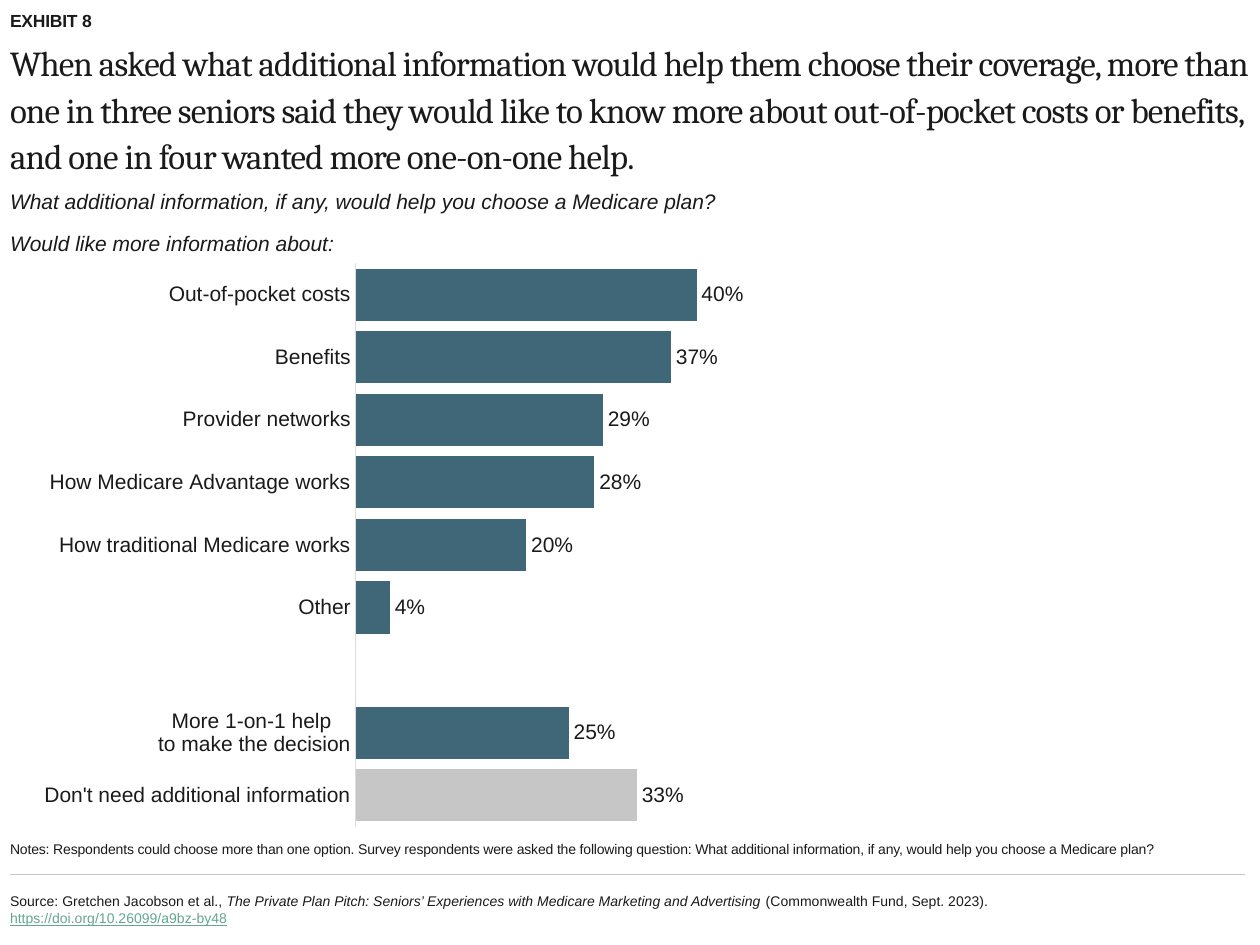
from dataclasses import dataclass

import pptx
import pptx.chart.data
import pptx.dml.color
import pptx.enum.chart
import pptx.enum.shapes
import pptx.enum.text
import pptx.oxml
import pptx.oxml.ns
import pptx.util
from pptx.dml.color import RGBColor
from pptx.util import Pt

INK = RGBColor(0x1A, 0x1A, 0x1A)
TEAL = RGBColor(0x3F, 0x67, 0x77)
GREY = RGBColor(0xC6, 0xC6, 0xC6)
AXIS_GREY = RGBColor(0xDD, 0xDD, 0xDD)
LINK_GREEN = RGBColor(0x65, 0xA5, 0x91)

LEFT = 5.76
FULL_WIDTH = 708.48
RULE_WIDTH = 705.6
TOP = pptx.enum.text.MSO_ANCHOR.TOP
MIDDLE = pptx.enum.text.MSO_ANCHOR.MIDDLE
BOTTOM = pptx.enum.text.MSO_ANCHOR.BOTTOM

ANSWERS = [
    ("Don't need additional information", 0.33),
    ("More 1-on-1 help \nto make the decision", 0.25),
    ("", None),
    ("Other", 0.04),
    ("How traditional Medicare works", 0.2),
    ("How Medicare Advantage works", 0.28),
    ("Provider networks", 0.29),
    ("Benefits", 0.37),
    ("Out-of-pocket costs", 0.4),
]


@dataclass
class Span:
    text: str
    italic: bool = False
    bold: bool = False
    underline: bool = False
    color: RGBColor = INK


@dataclass
class TextBlock:
    """A text box; lengths and tracking are in points."""
    top: float
    width: float
    height: float
    size: float
    spans: list[Span]
    font: str = "Arial"
    anchor: pptx.enum.text.MSO_ANCHOR = TOP
    tracking: float = 0
    line_spacing: float = 1.0


TITLE = TextBlock(21.6, FULL_WIDTH, 72, 20, [Span(
    "When asked what additional information would help them choose their coverage, "
    "more than one in three seniors said they would like to know more about "
    "out-of-pocket costs or benefits, and one in four wanted more one-on-one help.")],
    font="Cambria", tracking=-0.5, line_spacing=1.1)
EXHIBIT = TextBlock(5.76, FULL_WIDTH, 14.4, 10, [Span("EXHIBIT 8", bold=True)],
                    tracking=-0.1)
QUESTION = TextBlock(108, 432, 18, 12, [Span(
    "What additional information, if any, would help you choose a Medicare plan?",
    italic=True)])
LEAD_IN = TextBlock(131.76, 216, 18, 12,
                    [Span("Would like more information about:", italic=True)])
NOTES = TextBlock(450, FULL_WIDTH, 39.6, 8, [Span(
    "Notes: Respondents could choose more than one option. Survey respondents were "
    "asked the following question: What additional information, if any, would help "
    "you choose a Medicare plan?")], anchor=BOTTOM, tracking=-0.1)
SOURCE = TextBlock(503.28, 561.6, 33.12, 8, [
    Span("Source: Gretchen Jacobson et al., "),
    Span("The Private Plan Pitch: Seniors’ Experiences with Medicare Marketing "
         "and Advertising", italic=True),
    Span(" (Commonwealth Fund, Sept. 2023). "),
    Span("https://doi.org/10.26099/a9bz-by48", underline=True, color=LINK_GREEN),
], anchor=MIDDLE)


def style_font(font: pptx.text.text.Font, size: float, name: str = "Arial",
               color: RGBColor = INK) -> None:
    font.size = Pt(size)
    font.name = name
    font.color.rgb = color


def add_text(page: pptx.slide.Slide, block: TextBlock) -> None:
    box = page.shapes.add_textbox(Pt(LEFT), Pt(block.top), Pt(block.width), Pt(block.height))
    frame = box.text_frame
    frame.word_wrap = True
    frame.vertical_anchor = block.anchor
    frame.margin_left = frame.margin_right = frame.margin_top = frame.margin_bottom = 0
    para = frame.paragraphs[0]
    para.line_spacing = block.line_spacing
    for span in block.spans:
        run = para.add_run()
        run.text = span.text
        style_font(run.font, block.size, block.font, span.color)
        run.font.bold = span.bold
        run.font.italic = span.italic
        run.font.underline = span.underline
        if block.tracking:
            run._r.get_or_add_rPr().set("spc", str(round(block.tracking * 100)))


def add_rule(page: pptx.slide.Slide, top: float) -> None:
    rule = page.shapes.add_connector(
        pptx.enum.shapes.MSO_CONNECTOR.STRAIGHT,
        Pt(LEFT), Pt(top), Pt(LEFT + RULE_WIDTH), Pt(top))
    rule.line.color.rgb = GREY
    rule.line.width = Pt(0.75)
    rule._element.spPr.append(pptx.oxml.parse_xml(
        f'<a:effectLst {pptx.oxml.ns.nsdecls("a")}/>'))


def place_plot(chart: pptx.chart.chart.Chart, x: float, y: float,
               width: float, height: float) -> None:
    """Fix the inner plot area, in fractions of the chart's size."""
    plot_area = chart._chartSpace.chart.plotArea
    for old in plot_area.findall(pptx.oxml.ns.qn("c:layout")):
        plot_area.remove(old)
    sizes = "".join(f'<c:{key} val="{value}"/>' for key, value in
                    (("x", x), ("y", y), ("w", width), ("h", height)))
    plot_area.insert(0, pptx.oxml.parse_xml(
        f'<c:layout {pptx.oxml.ns.nsdecls("c")}><c:manualLayout>'
        '<c:layoutTarget val="inner"/><c:xMode val="edge"/><c:yMode val="edge"/>'
        f'{sizes}</c:manualLayout></c:layout>'))


def add_answer_chart(page: pptx.slide.Slide) -> None:
    data = pptx.chart.data.CategoryChartData(number_format="0%")
    data.categories = [label for label, _ in ANSWERS]
    data.add_series("Series 1", [share for _, share in ANSWERS])
    chart = page.shapes.add_chart(
        pptx.enum.chart.XL_CHART_TYPE.BAR_CLUSTERED,
        Pt(LEFT), Pt(126), Pt(RULE_WIDTH), Pt(349.92), data).chart
    chart.has_legend = False
    chart.has_title = False
    style_font(chart.font, 10)
    place_plot(chart, 0.28, 0.07, 0.69, 0.92)

    values = chart.value_axis
    values.minimum_scale, values.maximum_scale = 0, 1
    values.has_major_gridlines = False
    values.visible = False
    categories = chart.category_axis
    categories.major_tick_mark = pptx.enum.chart.XL_TICK_MARK.NONE
    categories.format.line.color.rgb = AXIS_GREY
    categories.format.line.width = Pt(0.75)
    style_font(categories.tick_labels.font, 12)

    plot = chart.plots[0]
    plot.gap_width = 20
    plot.vary_by_categories = False
    plot.has_data_labels = True
    labels = plot.data_labels
    labels.show_value = True
    labels.number_format = "0%"
    labels.number_format_is_linked = False
    labels.position = pptx.enum.chart.XL_LABEL_POSITION.OUTSIDE_END
    style_font(labels.font, 12)

    bars = plot.series[0]
    bars.invert_if_negative = False
    for item, color in ((bars, TEAL), (bars.points[0], GREY)):
        item.format.fill.solid()
        item.format.fill.fore_color.rgb = color


def main() -> None:
    deck = pptx.Presentation()
    deck.slide_width, deck.slide_height = Pt(720), Pt(540)
    page = deck.slides.add_slide(deck.slide_layouts[6])
    add_text(page, SOURCE)
    add_rule(page, 499.68)
    add_text(page, TITLE)
    add_answer_chart(page)
    for block in (NOTES, EXHIBIT, QUESTION, LEAD_IN):
        add_text(page, block)
    deck.save("out.pptx")


if __name__ == "__main__":
    main()
